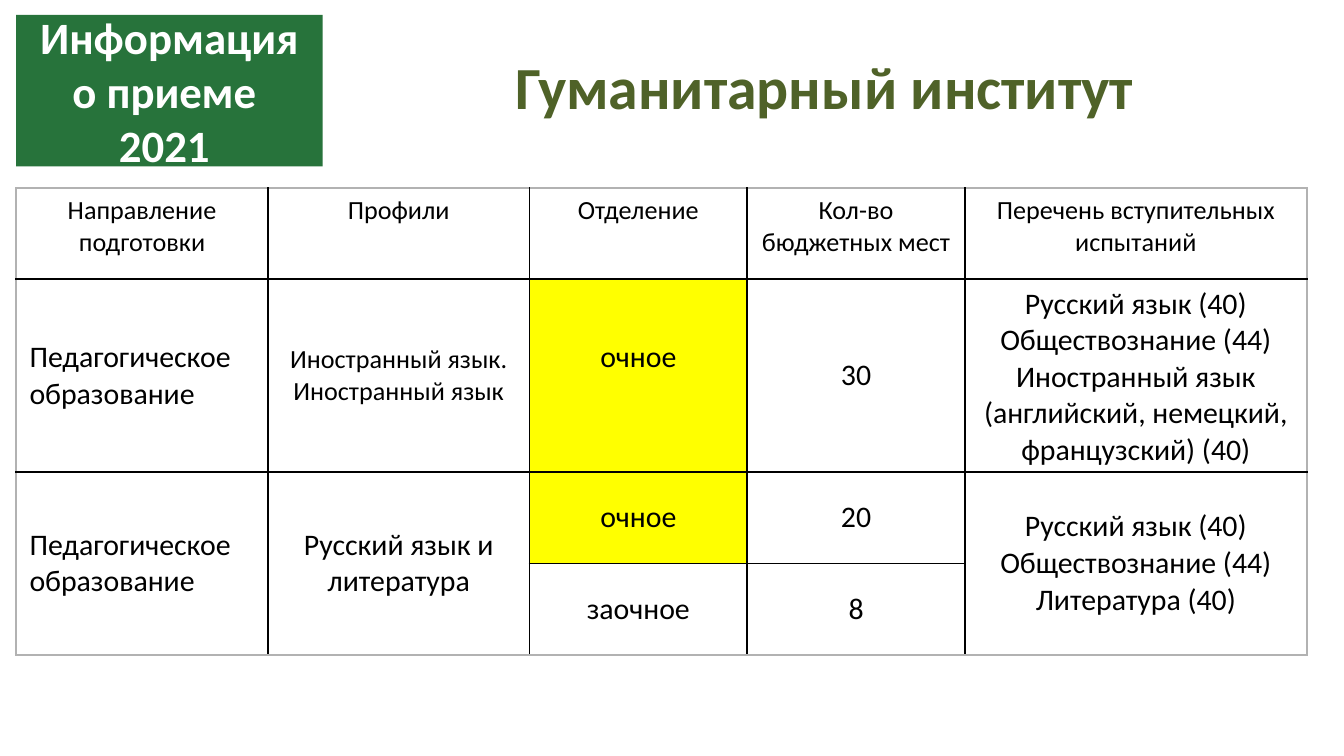
"""Build the admission information slide of the Humanities Institute."""
from dataclasses import dataclass
from typing import Optional

from lxml import etree
from pptx import Presentation
from pptx.dml.color import RGBColor
from pptx.enum.shapes import MSO_SHAPE
from pptx.enum.text import MSO_ANCHOR, MSO_AUTO_SIZE, PP_ALIGN
from pptx.oxml.ns import qn
from pptx.util import Inches, Pt

LEFT, CENTER = PP_ALIGN.LEFT, PP_ALIGN.CENTER
TOP, MIDDLE = MSO_ANCHOR.TOP, MSO_ANCHOR.MIDDLE
RECTANGLE = MSO_SHAPE.RECTANGLE
GROW = MSO_AUTO_SIZE.SHAPE_TO_FIT_TEXT

GREEN = RGBColor(0x27, 0x73, 0x3B)
OLIVE = RGBColor(0x4F, 0x62, 0x28)
YELLOW = RGBColor(0xFF, 0xFF, 0x00)
WHITE = RGBColor(0xFF, 0xFF, 0xFF)
BLACK = RGBColor(0x00, 0x00, 0x00)
GREY = RGBColor(0xB2, 0xB2, 0xB2)

FONT = "Calibri"
WIDTH = Inches(10)
HEIGHT = WIDTH * 9 // 16
COLUMN_PERCENTS = (18.75, 19.45, 16.2, 16.2, 25.45)
ROW_PERCENTS = (12.1, 25.45, 12.1, 12.1)


@dataclass(frozen=True)
class Entry:
    """Content of one table cell and the rows it covers."""
    row: int
    column: int
    lines: tuple[str, ...]
    size: int = 16
    align: PP_ALIGN = CENTER
    anchor: MSO_ANCHOR = MIDDLE
    fill: Optional[RGBColor] = None
    rows: int = 1
    bottom: float = 0.05


HEADINGS = ("Направление подготовки", "Профили", "Отделение",
            "Кол-во бюджетных мест", "Перечень вступительных испытаний")
DIRECTION = ("Педагогическое образование",)
COMMON_EXAMS = ("Русский язык (40)", "Обществознание (44)")

ENTRIES = [Entry(0, column, (heading,), 14, anchor=TOP)
           for column, heading in enumerate(HEADINGS)] + [
    Entry(1, 0, DIRECTION, align=LEFT),
    Entry(1, 1, ("Иностранный язык. Иностранный язык",), 14),
    Entry(1, 2, ("очное",), fill=YELLOW, bottom=0.32),
    Entry(1, 3, ("30",)),
    Entry(1, 4, COMMON_EXAMS + ("Иностранный язык (английский, немецкий, французский) (40)",),
          anchor=TOP),
    Entry(2, 0, DIRECTION, align=LEFT, rows=2),
    Entry(2, 1, ("Русский язык и литература",), rows=2),
    Entry(2, 2, ("очное",), fill=YELLOW),
    Entry(2, 3, ("20",)),
    Entry(2, 4, COMMON_EXAMS + ("Литература (40)",), rows=2),
    Entry(3, 2, ("заочное",)),
    Entry(3, 3, ("8",)),
]


def across(percent: float) -> int:
    """Return a share of the slide width."""
    return round(WIDTH * percent / 100)


def down(percent: float) -> int:
    """Return a share of the slide height."""
    return round(HEIGHT * percent / 100)


def add_run(paragraph, text: str, size: int, color: RGBColor, bold: bool = False) -> None:
    """Append a formatted run to a paragraph."""
    run = paragraph.add_run()
    run.text = text
    font = run.font
    font.name, font.size, font.bold = FONT, Pt(size), bold
    font.color.rgb = color


def add_badge(slide) -> None:
    """Draw the green badge with the admission year."""
    badge = slide.shapes.add_shape(RECTANGLE, across(1.2), down(1.96), across(22.8), down(20.05))
    badge.shadow.inherit = False
    badge.fill.solid()
    badge.fill.fore_color.rgb = GREEN
    badge.line.fill.background()
    frame = badge.text_frame
    frame.word_wrap, frame.vertical_anchor = True, MIDDLE
    paragraph = frame.paragraphs[0]
    paragraph.alignment = CENTER
    add_run(paragraph, "Информация о приеме ", 24, WHITE, True)
    paragraph.add_line_break()
    add_run(paragraph, "2021 ", 24, WHITE, True)


def set_title(slide) -> None:
    """Place and format the institute name."""
    title = slide.shapes.title
    title.left, title.top = across(27.7), down(5.7)
    title.width, title.height = across(67.3), down(11.4)
    frame = title.text_frame
    frame.word_wrap, frame.auto_size, frame.vertical_anchor = True, GROW, TOP
    paragraph = frame.paragraphs[0]
    paragraph.alignment = CENTER
    add_run(paragraph, "Гуманитарный институт", 32, OLIVE, True)


def add_border(cell, side: str, color: RGBColor) -> None:
    """Add a one-point border to one side of a cell."""
    properties = cell._tc.get_or_add_tcPr()
    line = etree.SubElement(properties, qn(f"a:ln{side}"), w=str(Pt(1)))
    solid = etree.SubElement(line, qn("a:solidFill"))
    etree.SubElement(solid, qn("a:srgbClr"), val=str(color))


def fill_cell(table, entry: Entry) -> None:
    """Write one entry with its borders and fill."""
    cell = table.cell(entry.row, entry.column)
    last_row = entry.row + entry.rows - 1
    if entry.rows > 1:
        cell.merge(table.cell(last_row, entry.column))
    outer_sides = {"L": entry.column == 0, "R": entry.column == len(COLUMN_PERCENTS) - 1,
                   "T": entry.row == 0, "B": last_row == len(ROW_PERCENTS) - 1}
    for row in range(entry.row, last_row + 1):
        part = table.cell(row, entry.column)
        for side, outer in outer_sides.items():
            if side != "T" or row == entry.row:
                add_border(part, side, GREY if outer else BLACK)
        if entry.fill is None:
            part.fill.background()
        else:
            part.fill.solid()
            part.fill.fore_color.rgb = entry.fill
    cell.vertical_anchor = entry.anchor
    cell.margin_left = cell.margin_right = Inches(0.1)
    cell.margin_top, cell.margin_bottom = Inches(0.05), Inches(entry.bottom)
    frame = cell.text_frame
    for index, text in enumerate(entry.lines):
        paragraph = frame.add_paragraph() if index else frame.paragraphs[0]
        paragraph.alignment = entry.align
        add_run(paragraph, text, entry.size, BLACK)


def add_admission_table(slide) -> None:
    """Draw the table of programmes, places and exams."""
    table = slide.shapes.add_table(
        len(ROW_PERCENTS), len(COLUMN_PERCENTS), across(1.2), down(24.85),
        across(sum(COLUMN_PERCENTS)), down(sum(ROW_PERCENTS))).table
    table.first_row = table.horz_banding = False
    for column, percent in zip(table.columns, COLUMN_PERCENTS):
        column.width = across(percent)
    for row, percent in zip(table.rows, ROW_PERCENTS):
        row.height = down(percent)
    for entry in ENTRIES:
        fill_cell(table, entry)


def main() -> None:
    """Create and save the presentation."""
    presentation = Presentation()
    presentation.slide_width, presentation.slide_height = WIDTH, HEIGHT
    slide = presentation.slides.add_slide(presentation.slide_layouts[5])
    add_badge(slide)
    set_title(slide)
    add_admission_table(slide)
    presentation.save("out.pptx")


if __name__ == "__main__":
    main()
